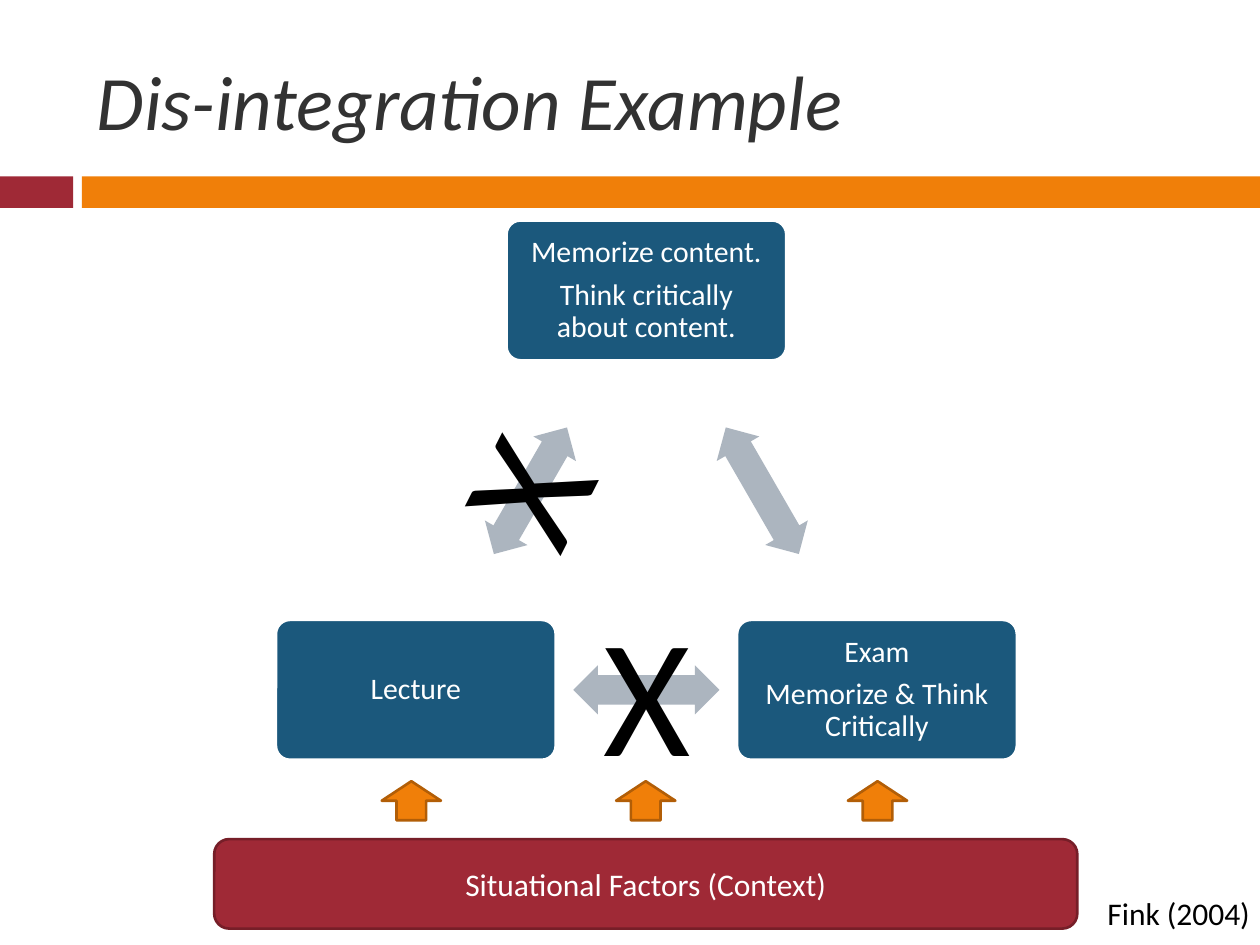
from dataclasses import dataclass
from typing import Optional

from pptx import Presentation
from pptx.dml.color import RGBColor
from pptx.enum.shapes import MSO_SHAPE as Kind
from pptx.enum.text import MSO_ANCHOR as Anchor, MSO_AUTO_SIZE as Fit, PP_ALIGN as Align
from pptx.util import Inches, Pt

HUES = {
    "red": "9F2936", "wine": "761E28", "orange": "F07F09", "rust": "B25E07",
    "blue": "1B587C", "gray": "ACB5BF", "white": "FFFFFF", "ink": "323232",
    "black": "000000",
}
FONT = "Calibri"


@dataclass
class Box:
    left: float
    top: float
    width: float
    height: float
    turn: float = 0


@dataclass
class Node:
    left: float
    top: float
    lines: list[str]


@dataclass
class Label:
    box: Box
    text: str
    size: int


def hue(name: str) -> RGBColor:
    return RGBColor.from_string(HUES[name])


def place(box: Box) -> list[int]:
    return [Inches(n) for n in (box.left, box.top, box.width, box.height)]


def draw(slide, kind: Kind, box: Box, fill: str, edge: Optional[str] = None):
    shape = slide.shapes.add_shape(kind, *place(box))
    shape.rotation = box.turn
    shape.shadow.inherit = False
    shape.fill.solid()
    shape.fill.fore_color.rgb = hue(fill)
    if edge:
        shape.line.color.rgb = hue(edge)
        shape.line.width = Pt(1.5)
    else:
        shape.line.fill.background()
    return shape


def write(frame, lines: list[str], size: int, color: str, align=Align.LEFT,
          anchor=Anchor.TOP, slant: bool = False) -> None:
    frame.vertical_anchor = anchor
    frame.text = "\n".join(lines)
    for para in frame.paragraphs:
        para.alignment = align
        font = para.font
        font.name, font.size, font.italic = FONT, Pt(size), slant
        font.color.rgb = hue(color)


def draw_node(slide, node: Node) -> None:
    shape = draw(slide, Kind.ROUNDED_RECTANGLE,
                 Box(node.left, node.top, 2.22, 1.11), "blue", "white")
    shape.adjustments[0] = 0.1
    frame = shape.text_frame
    frame.word_wrap = True
    frame.margin_left = frame.margin_right = Inches(0.1)
    frame.margin_top = frame.margin_bottom = Inches(0.1)
    write(frame, node.lines, 17, "white", Align.CENTER, Anchor.MIDDLE)
    for para in frame.paragraphs:
        para.line_spacing = 0.9
        para.space_after = Pt(6)


def draw_label(slide, label: Label) -> None:
    shape = slide.shapes.add_textbox(*place(label.box))
    shape.rotation = label.box.turn
    frame = shape.text_frame
    frame.word_wrap = False
    frame.auto_size = Fit.SHAPE_TO_FIT_TEXT
    write(frame, [label.text], label.size, "black")


NODES = [
    Node(4.02, 1.75, ["Memorize content.", "Think critically about content."]),
    Node(5.85, 4.92, ["Exam", "Memorize & Think Critically"]),
    Node(2.19, 4.92, ["Lecture"]),
]
LINKS = [(5.47, 3.7, 60), (4.55, 5.28, 180), (3.63, 3.7, 300)]
LABELS = [
    Label(Box(8.69, 7.05, 1.35, 0.4), "Fink (2004)", 18),
    Label(Box(3.68, 2.99, 0.95, 1.72, 296.8), "X", 96),
    Label(Box(4.69, 4.62, 0.95, 1.72), "X", 96),
]


def main() -> None:
    deck = Presentation()
    deck.slide_width, deck.slide_height = Inches(10), Inches(7.5)
    slide = deck.slides.add_slide(deck.slide_layouts[6])

    # Title and band
    draw(slide, Kind.RECTANGLE, Box(0, 1.4, 0.58, 0.25), "red")
    draw(slide, Kind.RECTANGLE, Box(0.65, 1.4, 9.35, 0.25), "orange")
    title = slide.shapes.add_textbox(*place(Box(0.67, 0.25, 8.92, 1.08)))
    title.text_frame.word_wrap = True
    write(title.text_frame, ["Dis-integration Example"], 44, "ink",
          anchor=Anchor.MIDDLE, slant=True)

    # Triangle of nodes and two-way arrows
    for node in NODES:
        draw_node(slide, node)
    for left, top, turn in LINKS:
        link = draw(slide, Kind.LEFT_RIGHT_ARROW,
                    Box(left, top, 1.16, 0.39, turn), "gray")
        link.adjustments[0] = 0.6
        link.adjustments[1] = 0.5

    # Context bar and the arrows rising from it
    base = draw(slide, Kind.ROUNDED_RECTANGLE, Box(1.7, 6.66, 6.85, 0.71),
                "red", "wine")
    write(base.text_frame, ["Situational Factors (Context)"], 18, "white",
          Align.CENTER, Anchor.MIDDLE)
    for left in (3.03, 4.89, 6.73):
        draw(slide, Kind.UP_ARROW, Box(left, 6.2, 0.47, 0.31), "orange", "rust")

    # Source credit and crosses
    for label in LABELS:
        draw_label(slide, label)

    deck.save("out.pptx")


if __name__ == "__main__":
    main()
